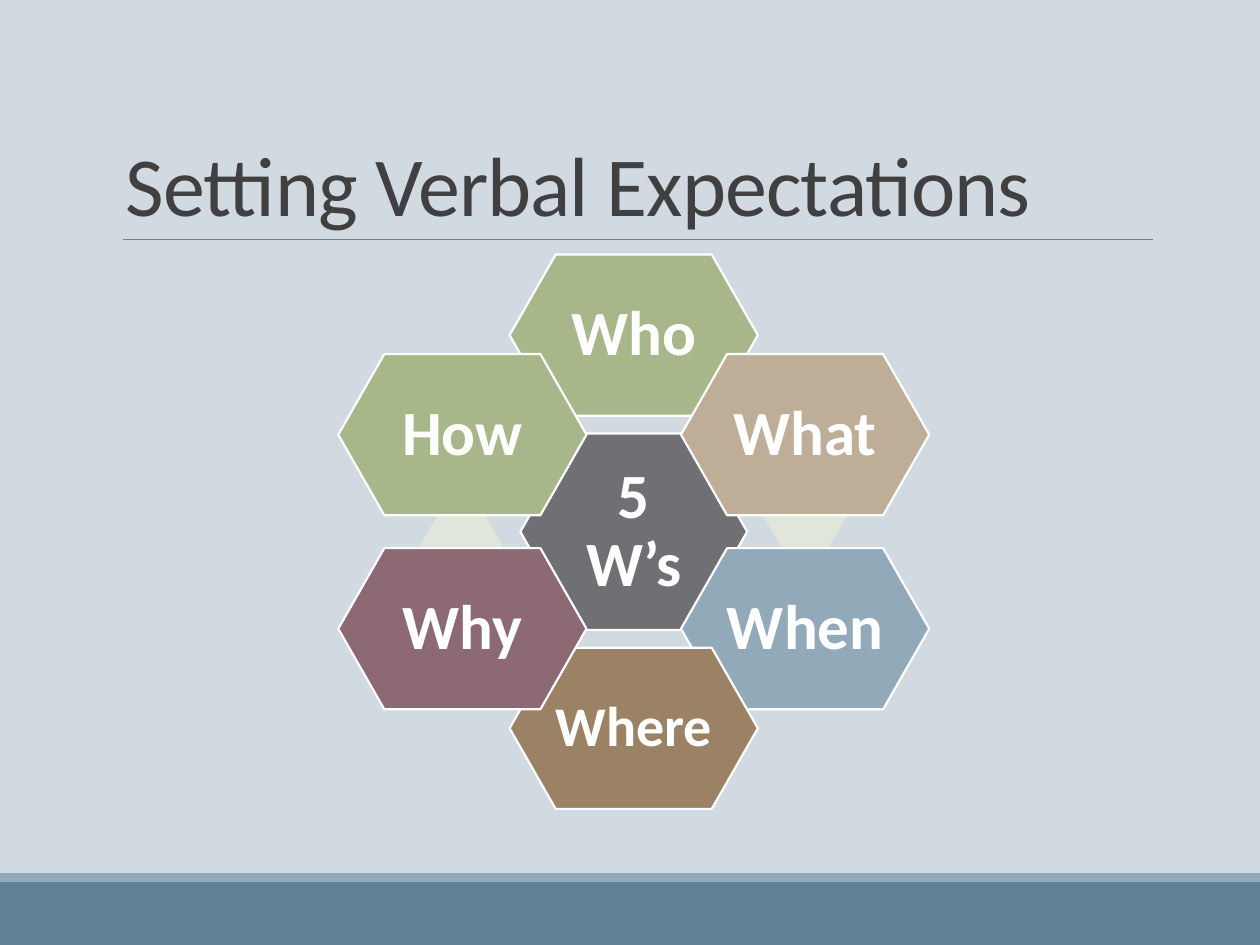
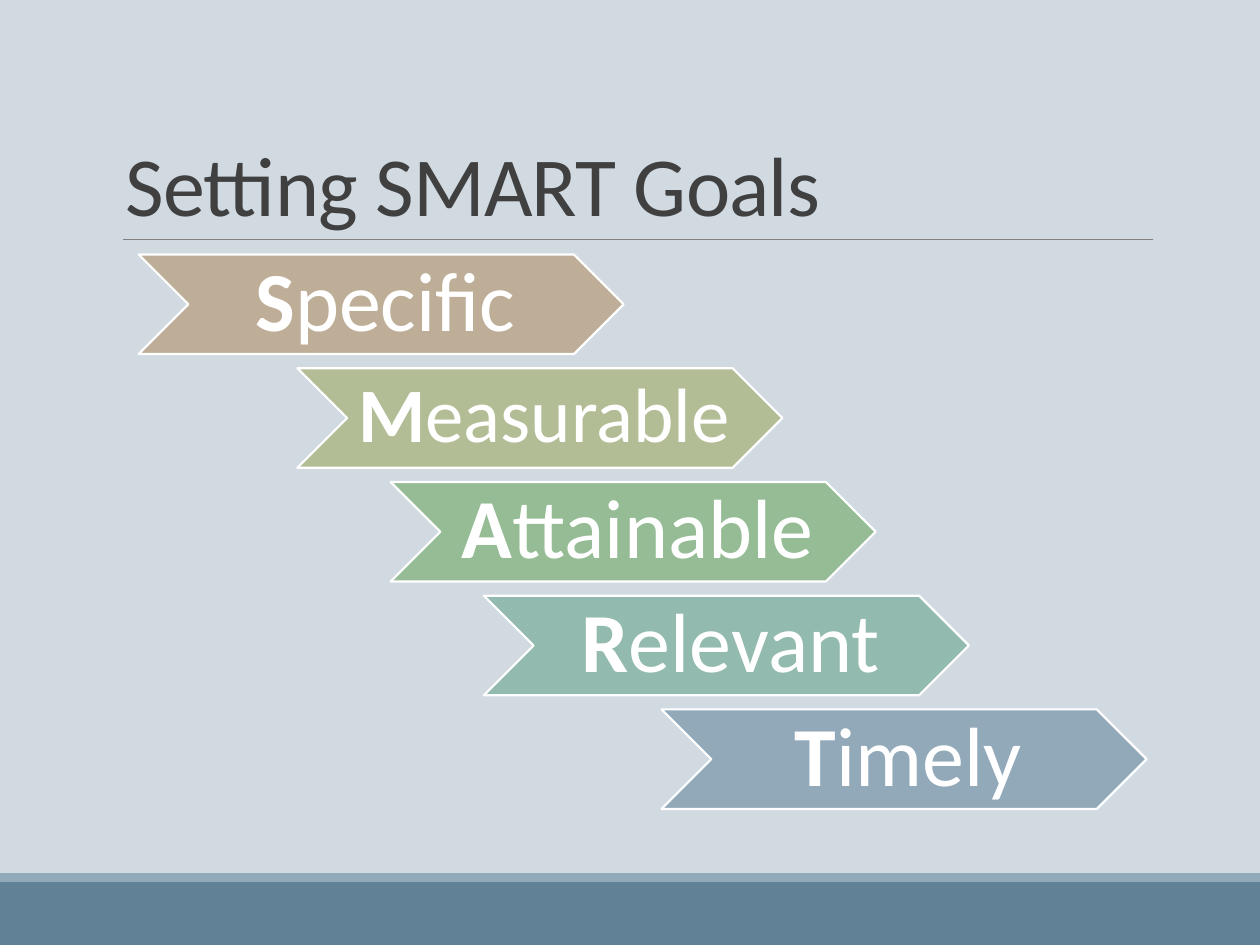
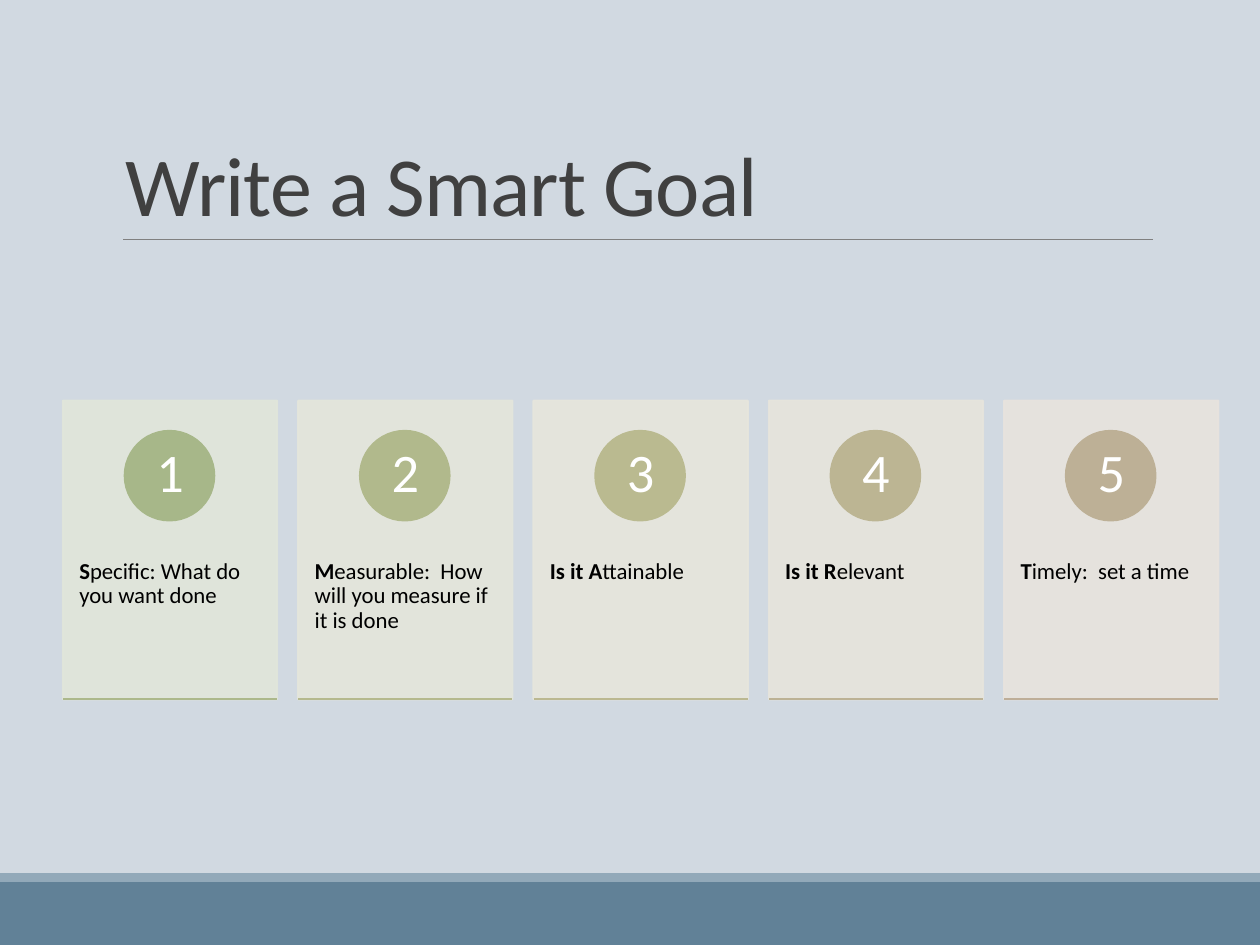
import pptx
import pptx.dml.color
import pptx.enum.shapes
import pptx.enum.text
import pptx.oxml.ns
import pptx.util
import lxml.etree

Inches = pptx.util.Inches
Kind = pptx.enum.shapes.MSO_SHAPE
Align = pptx.enum.text.PP_ALIGN
Anchor = pptx.enum.text.MSO_ANCHOR
qn = pptx.oxml.ns.qn


class Theme:
    font = "Calibri"
    back = "D1D9E1"
    band = "618197"
    strip = "92A9B9"
    rule = "808080"
    title = "404040"
    white = "FFFFFF"
    black = "000000"
    accent = "E1E6DA"
    core = "6F6F74"
    green = "A7B789"
    tan = "BEAE98"
    blue = "92A9B9"
    brown = "9C8265"
    plum = "8D6974"
    steps = ["BEAE98", "B2BD96", "95BC95", "93BAAF", "92A9B9"]
    cards = ["E1E6DA", "E4E6DB", "E7E6DC", "E7E5DC", "E8E3DD"]
    discs = ["A7B789", "B1B98C", "BABA90", "BCB593", "BDB096"]
    edges = ["ACB88B", "B5B98E", "BBB891", "BCB295", "BEAE98"]
    line = 1.25
    thin = 0.5
    head_size = 48
    hex_size = 36
    small_hex = 32
    step_size = 48
    small_step = 44
    disc_size = 31
    card_size = 13


def color(code):
    return pptx.dml.color.RGBColor.from_string(code)


def add_box(slide, kind, left, top, width, height, fill, line=None, alpha=None):
    box = slide.shapes.add_shape(
        kind, Inches(left), Inches(top), Inches(width), Inches(height))
    box.shadow.inherit = False
    box.fill.solid()
    box.fill.fore_color.rgb = color(fill)
    if line:
        box.line.color.rgb = color(line)
        box.line.width = pptx.util.Pt(Theme.line)
    else:
        box.line.fill.background()
    if alpha:
        for node in box._element.spPr.iter(qn("a:srgbClr")):
            lxml.etree.SubElement(node, qn("a:alpha")).set("val", str(alpha * 1000))
    return box


def add_rule(slide, left, right, top, code, width):
    rule = slide.shapes.add_connector(
        pptx.enum.shapes.MSO_CONNECTOR.STRAIGHT,
        Inches(left), Inches(top), Inches(right), Inches(top))
    rule.line.color.rgb = color(code)
    rule.line.width = pptx.util.Pt(width)
    lxml.etree.SubElement(rule._element.spPr, qn("a:effectLst"))


def add_text(slide, left, top, width, height, bold, plain, size, code,
             inset=(0.1, 0.05, 0.1, 0.05), align=Align.CENTER,
             anchor=Anchor.MIDDLE, space=0.9):
    box = slide.shapes.add_textbox(
        Inches(left), Inches(top), Inches(width), Inches(height))
    frame = box.text_frame
    frame.word_wrap = True
    frame.auto_size = pptx.enum.text.MSO_AUTO_SIZE.NONE
    frame.vertical_anchor = anchor
    (frame.margin_left, frame.margin_top,
     frame.margin_right, frame.margin_bottom) = map(Inches, inset)
    para = frame.paragraphs[0]
    para.alignment = align
    para.line_spacing = space
    for text, heavy in ((bold, True), (plain, False)):
        if text:
            run = para.add_run()
            run.text = text
            run.font.name = Theme.font
            run.font.size = pptx.util.Pt(size)
            run.font.bold = heavy
            run.font.color.rgb = color(code)
    return para


def add_slide(deck, title):
    slide = deck.slides.add_slide(deck.slide_layouts[6])
    slide.background.fill.solid()
    slide.background.fill.fore_color.rgb = color(Theme.back)
    add_box(slide, Kind.RECTANGLE, 0, 7, 10, 0.5, Theme.band)
    add_box(slide, Kind.RECTANGLE, 0, 6.93, 10, 0.07, Theme.strip)
    add_rule(slide, 0.98, 9.15, 1.9, Theme.rule, Theme.thin)
    para = add_text(slide, 0.9, 0.31, 8.25, 1.59, "", title, Theme.head_size,
                    Theme.title, align=Align.LEFT, anchor=Anchor.BOTTOM, space=0.85)
    para.runs[0].font._element.set("spc", "-50")
    return slide


def add_hex(slide, mid_x, mid_y, width, height, fill, line=None, bend=0.286):
    box = add_box(slide, Kind.HEXAGON, mid_x - width / 2, mid_y - height / 2,
                  width, height, fill, line)
    box.adjustments[0] = bend


def add_cell(slide, mid_x, mid_y, size, inner, word, fill, points=Theme.hex_size):
    add_hex(slide, mid_x, mid_y, *size, fill, Theme.white)
    width, height = inner
    add_text(slide, mid_x - width / 2, mid_y - height / 2, width, height,
             word, "", points, Theme.white, (0.05,) * 4)


def add_step(slide, left, top, first, rest, fill, points):
    width, height, side = 3.85, 0.79, 0.39
    add_box(slide, Kind.CHEVRON, left, top, width, height, fill, Theme.white)
    add_text(slide, left + side, top, width - 2 * side, height, first, rest,
             points, Theme.white, (0.07, 0.03, 0, 0.03))


def add_card(slide, left, count, bold, plain, fill, disc, edge):
    top, width, height = 3.18, 1.7, 2.37
    add_box(slide, Kind.RECTANGLE, left, top, width, height, fill, fill, 90)
    add_text(slide, left, top + 0.9, width, 1.42, bold, plain, Theme.card_size,
             Theme.black, (0.13, 0.36, 0.13, 0.36), Align.LEFT, Anchor.TOP)
    add_box(slide, Kind.OVAL, left + 0.49, top + 0.24, 0.71, 0.71, disc, disc)
    add_text(slide, left + 0.6, top + 0.34, 0.5, 0.5, "", str(count),
             Theme.disc_size, Theme.white, (0.06, 0.01, 0.06, 0.01))
    add_rule(slide, left, left + width, top + height, edge, Theme.line)


def draw_words(deck):
    slide = add_slide(deck, "Setting Verbal Expectations")
    mid_x, mid_y = 5.03, 4.22
    side, near, far = 1.36, 0.77, 1.56
    add_cell(slide, mid_x, mid_y, (1.8, 1.56), (1.21, 1.04), "5 W’s", Theme.core)
    cells = [
        ("Who", 0, -far, Theme.green, (5.59, 2.98)),
        ("What", side, -near, Theme.tan, (6.39, 4.08)),
        ("When", side, near, Theme.blue, (5.83, 5.32)),
        ("Where", 0, far, Theme.brown, (4.47, 5.44)),
        ("Why", -side, near, Theme.plum, (3.66, 4.35)),
        ("How", -side, -near, Theme.green, None),
    ]
    for word, move_x, move_y, fill, accent in cells:
        if accent:
            add_hex(slide, *accent, 0.68, 0.59, Theme.accent, bend=0.289)
        points = Theme.small_hex if word == "Where" else Theme.hex_size
        add_cell(slide, mid_x + move_x, mid_y + move_y, (1.97, 1.28),
                 (1.4, 0.91), word, fill, points)


def draw_steps(deck):
    slide = add_slide(deck, "Setting SMART Goals")
    words = ["Specific", "Measurable", "Attainable", "Relevant", "Timely"]
    lefts = [1.1, 2.36, 3.1, 3.84, 5.25]
    first, last = 2.02, 5.63
    pitch = (last - first) / (len(words) - 1)
    for row, (word, left, fill) in enumerate(zip(words, lefts, Theme.steps)):
        points = Theme.small_step if word == "Measurable" else Theme.step_size
        add_step(slide, left, first + row * pitch, word[0], word[1:], fill, points)


def draw_cards(deck):
    slide = add_slide(deck, "Write a Smart Goal")
    texts = [
        ("S", "pecific: What do you want done"),
        ("M", "easurable:  How will you measure if it is done"),
        ("Is it A", "ttainable"),
        ("Is it R", "elevant"),
        ("T", "imely:  set a time"),
    ]
    first, last = 0.5, 7.97
    pitch = (last - first) / (len(texts) - 1)
    tints = zip(Theme.cards, Theme.discs, Theme.edges)
    for place, (text, tint) in enumerate(zip(texts, tints)):
        add_card(slide, first + place * pitch, place + 1, *text, *tint)


def main():
    deck = pptx.Presentation()
    deck.slide_width = Inches(10)
    deck.slide_height = Inches(7.5)
    draw_words(deck)
    draw_steps(deck)
    draw_cards(deck)
    deck.save("out.pptx")


if __name__ == "__main__":
    main()
